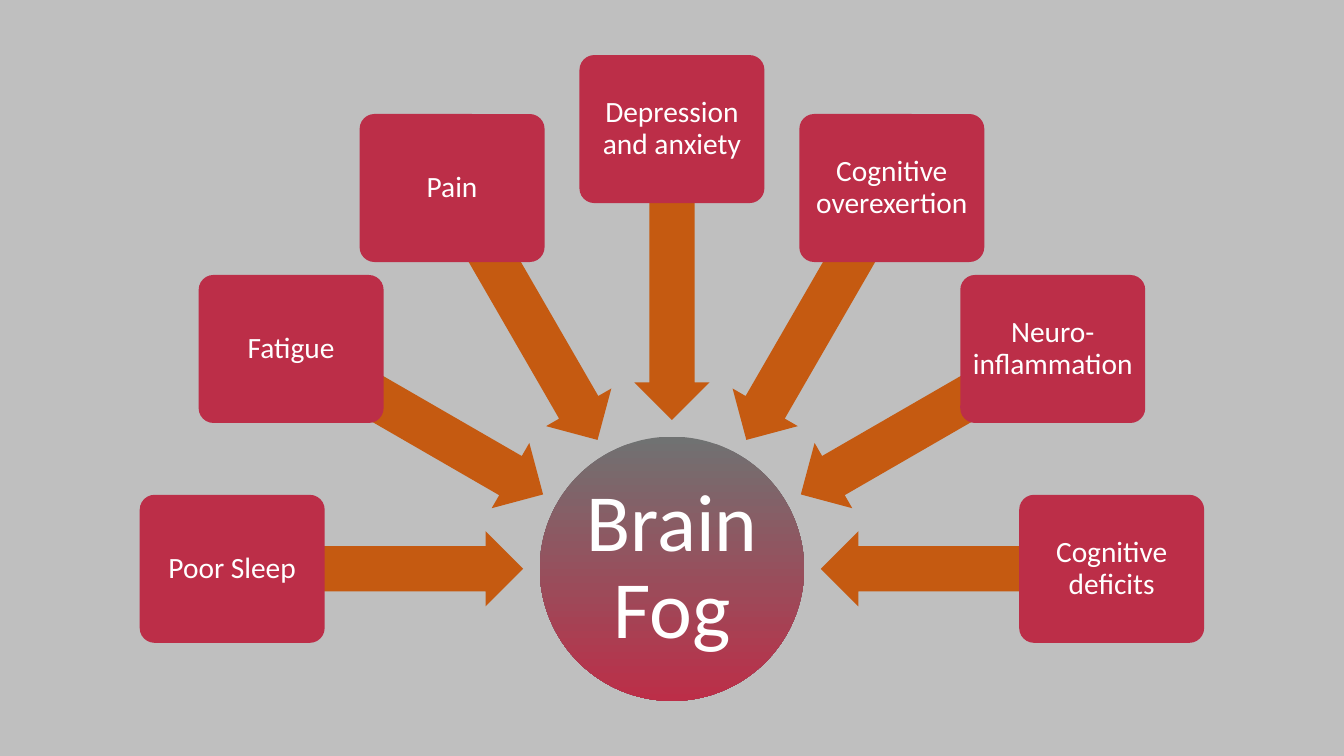
"""Build a slide with seven causes pointing at brain fog."""
import math
import pptx
import pptx.util
import pptx.dml.color
import pptx.enum.shapes
import pptx.enum.text

HUB = "Brain Fog"
CAUSES = [
    "Poor Sleep",
    "Fatigue",
    "Pain",
    "Depression and anxiety",
    "Cognitive overexertion",
    "Neuro-inflammation",
    "Cognitive deficits",
]

Pt = pptx.util.Pt
RGB = pptx.dml.color.RGBColor
KIND = pptx.enum.shapes.MSO_SHAPE
GREY = RGB(0xBF, 0xBF, 0xBF)
SLATE = RGB(0x70, 0x72, 0x72)
RED = RGB(0xBC, 0x2E, 0x48)
ORANGE = RGB(0xC5, 0x5A, 0x11)
WHITE = RGB(0xFF, 0xFF, 0xFF)

MID_X, MID_Y = 480, 406.3
HUB_D = 188.8
CARD_W, CARD_H, CARD_R = 132.1, 105.7, 314.1
ARROW_W, ARROW_H, ARROW_R = 208, 53.8, 210.3
START, SWEEP = 180, 180


def place(slide, kind, radius, angle, width, height, color):
    """Add a plain shape centred at a polar place around the hub."""
    turn = math.radians(angle)
    left = MID_X + radius * math.cos(turn) - width / 2
    top = MID_Y + radius * math.sin(turn) - height / 2
    shape = slide.shapes.add_shape(kind, Pt(left), Pt(top), Pt(width), Pt(height))
    shape.shadow.inherit = False
    shape.line.fill.background()
    shape.fill.solid()
    shape.fill.fore_color.rgb = color
    return shape


def label(shape, text, size):
    """Write centred white text in a shape."""
    frame = shape.text_frame
    frame.text = text
    frame.word_wrap = True
    frame.vertical_anchor = pptx.enum.text.MSO_ANCHOR.MIDDLE
    frame.margin_left = frame.margin_right = Pt(3)
    frame.margin_top = frame.margin_bottom = Pt(3)
    para = frame.paragraphs[0]
    para.alignment = pptx.enum.text.PP_ALIGN.CENTER
    para.line_spacing = 0.9
    font = para.runs[0].font
    font.name = "Calibri"
    font.size = Pt(size)
    font.color.rgb = WHITE


def main():
    """Draw the hub, then each arrow and its card."""
    deck = pptx.Presentation()
    deck.slide_width, deck.slide_height = Pt(960), Pt(540)
    slide = deck.slides.add_slide(deck.slide_layouts[6])
    slide.background.fill.solid()
    slide.background.fill.fore_color.rgb = GREY

    hub = place(slide, KIND.OVAL, 0, 0, HUB_D, HUB_D, RED)
    hub.fill.gradient()
    hub.fill.gradient_angle = 270
    for stop, color in zip(hub.fill.gradient_stops, (SLATE, RED)):
        stop.color.rgb = color
    label(hub, HUB, 58)

    step = SWEEP / (len(CAUSES) - 1)
    for i, cause in enumerate(CAUSES):
        angle = START + i * step
        arrow = place(slide, KIND.LEFT_ARROW, ARROW_R, angle, ARROW_W, ARROW_H, ORANGE)
        arrow.adjustments[0] = 0.6
        arrow.adjustments[1] = 0.5
        arrow.rotation = angle % 360
        card = place(slide, KIND.ROUNDED_RECTANGLE, CARD_R, angle, CARD_W, CARD_H, RED)
        card.adjustments[0] = 0.1
        label(card, cause, 21)

    deck.save("out.pptx")


if __name__ == "__main__":
    main()
